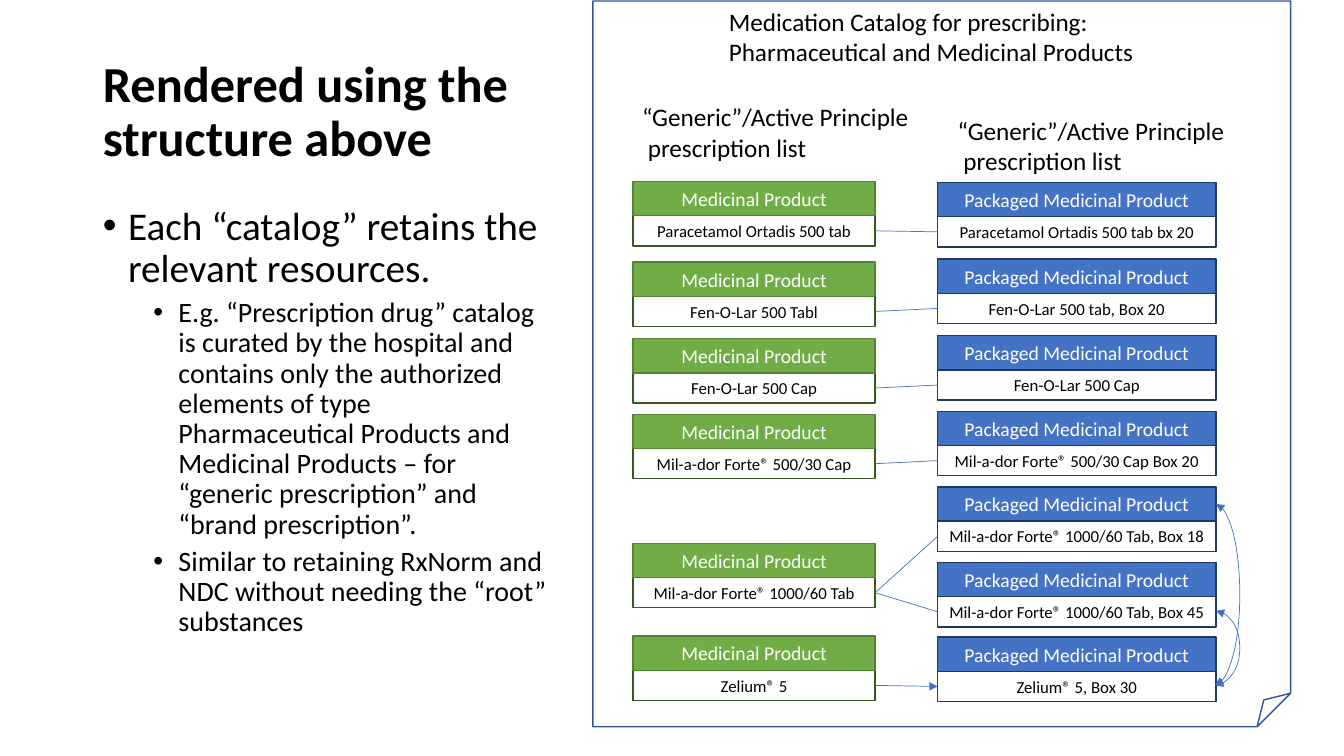
from lxml import etree
from pptx import Presentation
from pptx.dml.color import RGBColor
from pptx.enum.shapes import MSO_CONNECTOR, MSO_SHAPE
from pptx.enum.text import MSO_ANCHOR, MSO_AUTO_SIZE, PP_ALIGN
from pptx.oxml.ns import qn
from pptx.util import Inches, Pt

RECT, FOLDED = MSO_SHAPE.RECTANGLE, MSO_SHAPE.FOLDED_CORNER
STRAIGHT, CURVE = MSO_CONNECTOR.STRAIGHT, MSO_CONNECTOR.CURVE
LEFT, CENTER = PP_ALIGN.LEFT, PP_ALIGN.CENTER
TOP, MIDDLE = MSO_ANCHOR.TOP, MSO_ANCHOR.MIDDLE
NO_FIT = MSO_AUTO_SIZE.NONE
LEFT_SITE, RIGHT_SITE = 1, 3

FONT = "Calibri"
BLACK, WHITE, BLUE, GREEN = "000000", "FFFFFF", "4472C4", "70AD47"
HEAD_H, NAME_H = 0.34, 0.3

MEDICINAL = {
    "title": "Medicinal Product", "left": 6.28, "width": 2.4,
    "fill": GREEN, "edge": "548235", "frame": "385723",
    "items": [
        (1.8, "Paracetamol Ortadis 500 tab"),
        (2.6, "Fen-O-Lar 500 Tabl"),
        (3.36, "Fen-O-Lar 500 Cap"),
        (4.11, "Mil-a-dor Forte® 500/30 Cap"),
        (5.39, "Mil-a-dor Forte® 1000/60 Tab"),
        (6.31, "Zelium® 5"),
    ],
}
PACKAGED = {
    "title": "Packaged Medicinal Product", "left": 9.3, "width": 2.76,
    "fill": BLUE, "edge": "203864", "frame": "203864",
    "items": [
        (1.81, "Paracetamol Ortadis 500 tab bx 20"),
        (2.57, "Fen-O-Lar 500 tab, Box 20"),
        (3.33, "Fen-O-Lar 500 Cap"),
        (4.08, "Mil-a-dor Forte® 500/30 Cap Box 20"),
        (4.83, "Mil-a-dor Forte® 1000/60 Tab, Box 18"),
        (5.58, "Mil-a-dor Forte® 1000/60 Tab, Box 45"),
        (6.32, "Zelium® 5, Box 30"),
    ],
}
LINKS = [(0, 0), (1, 1), (2, 2), (3, 3), (4, 4), (4, 5)]
LIST_HEAD = ["“Generic”/Active Principle", " prescription list"]
LABELS = [
    (7.13, 0.01, 4.26, ["Medication Catalog for prescribing:",
                        "Pharmaceutical and Medicinal Products"]),
    (6.27, 0.96, 2.88, LIST_HEAD),
    (9.4, 1.09, 2.88, LIST_HEAD),
]
POINTS = [
    (0, "Each “catalog” retains the relevant resources."),
    (1, "E.g. “Prescription drug” catalog is curated by the hospital and "
        "contains only the authorized elements of type Pharmaceutical "
        "Products and Medicinal Products – for “generic prescription” and "
        "“brand prescription”."),
    (1, "Similar to retaining RxNorm and NDC without needing the “root” "
        "substances"),
]


def color(text):
    return RGBColor.from_string(text)


def style(para, size, ink=BLACK, align=LEFT, bold=False):
    para.alignment = align
    font = para.font
    font.name, font.size, font.bold = FONT, Pt(size), bold
    font.color.rgb = color(ink)


def place(shape, left, top, width, height):
    shape.left, shape.top = Inches(left), Inches(top)
    shape.width, shape.height = Inches(width), Inches(height)


def set_guide(shape, name, value):
    guides = shape._element.spPr.find(qn("a:prstGeom")).get_or_add_avLst()
    etree.SubElement(guides, qn("a:gd"), name=name, fmla=f"val {value}")


def add_title(slide):
    title = slide.shapes.title
    place(title, 0.92, 0.4, 4.74, 1.45)
    frame = title.text_frame
    frame.text = "Rendered using the structure above"
    frame.auto_size, frame.vertical_anchor = NO_FIT, MIDDLE
    para = frame.paragraphs[0]
    style(para, 36, bold=True)
    para.line_spacing = 0.9


def add_points(slide):
    body = slide.placeholders[1]
    place(body, 0.92, 2, 4.62, 4.76)
    frame = body.text_frame
    frame.text = "\n".join(text for _, text in POINTS)
    frame.auto_size, frame.vertical_anchor = NO_FIT, TOP
    for para, (level, _) in zip(frame.paragraphs, POINTS):
        para.level = level
        style(para, 20 if level else 28)
        para.line_spacing = 0.9
        para.space_before = Pt(5 if level else 10)
        props = para._p.get_or_add_pPr()
        props.set("marL", str(Inches(0.25 + 0.5 * level)))
        props.set("indent", str(Inches(-0.25)))
        bullet = etree.Element(qn("a:buChar"), char="•")
        face = etree.Element(qn("a:buFont"), typeface="Arial")
        props.find(qn("a:defRPr")).addprevious(face)
        face.addnext(bullet)


def add_label(slide, left, top, width, lines):
    box = slide.shapes.add_textbox(
        Inches(left), Inches(top), Inches(width), Inches(0.71))
    frame = box.text_frame
    frame.word_wrap = False
    frame.text = "\n".join(lines)
    for para in frame.paragraphs:
        style(para, 18)


def add_box(slide, area, text, size, ink, fill, edge):
    box = slide.shapes.add_shape(RECT, *map(Inches, area))
    box.shadow.inherit = False
    box.fill.solid()
    box.fill.fore_color.rgb = color(fill)
    box.line.color.rgb = color(edge)
    box.line.width = Pt(1)
    frame = box.text_frame
    frame.word_wrap = True
    frame.vertical_anchor = MIDDLE
    frame.text = text
    style(frame.paragraphs[0], size, ink, CENTER)
    return box


def add_column(slide, kind):
    left, width = kind["left"], kind["width"]
    boxes = []
    for top, name in kind["items"]:
        boxes.append(add_box(slide, (left, top + HEAD_H, width, NAME_H),
                             name, 12, BLACK, WHITE, kind["frame"]))
        add_box(slide, (left, top, width, HEAD_H),
                kind["title"], 14, WHITE, kind["fill"], kind["edge"])
    return boxes


def add_line(slide, kind, start, end, heads=()):
    line = slide.shapes.add_connector(kind, *map(Inches, start + end))
    line.line.color.rgb = color(BLUE)
    line.line.width = Pt(0.5)
    props = line._element.spPr
    etree.SubElement(props, qn("a:effectLst"))
    for side in heads:
        etree.SubElement(props.find(qn("a:ln")), qn("a:" + side),
                         type="triangle")
    return line


def link(slide, source, target, heads=()):
    line = add_line(slide, STRAIGHT, (8.68, 0), (9.3, 0), heads)
    line.begin_connect(source, RIGHT_SITE)
    line.end_connect(target, LEFT_SITE)


def add_arc(slide, top):
    arc = add_line(slide, CURVE, (12.05, 6.8), (12.06, top),
                   ("headEnd", "tailEnd"))
    set_guide(arc, "adj1", 2500000)


def add_page(slide):
    page = slide.shapes.add_shape(
        FOLDED, Inches(5.88), Inches(0.01), Inches(6.92), Inches(7.2))
    page.shadow.inherit = False
    set_guide(page, "adj", 4800)
    page.fill.background()
    page.line.color.rgb = color("325491")
    page.line.width = Pt(1)


def main():
    deck = Presentation()
    deck.slide_width, deck.slide_height = Inches(13.33), Inches(7.5)
    slide = deck.slides.add_slide(deck.slide_layouts[1])
    add_title(slide)
    add_points(slide)
    for label in LABELS:
        add_label(slide, *label)
    drugs = add_column(slide, MEDICINAL)
    packs = add_column(slide, PACKAGED)
    for drug, pack in LINKS:
        link(slide, drugs[drug], packs[pack])
    link(slide, drugs[-1], packs[-1], ("tailEnd",))
    for top in (6.06, 5):
        add_arc(slide, top)
    add_page(slide)
    deck.save("out.pptx")


if __name__ == "__main__":
    main()
